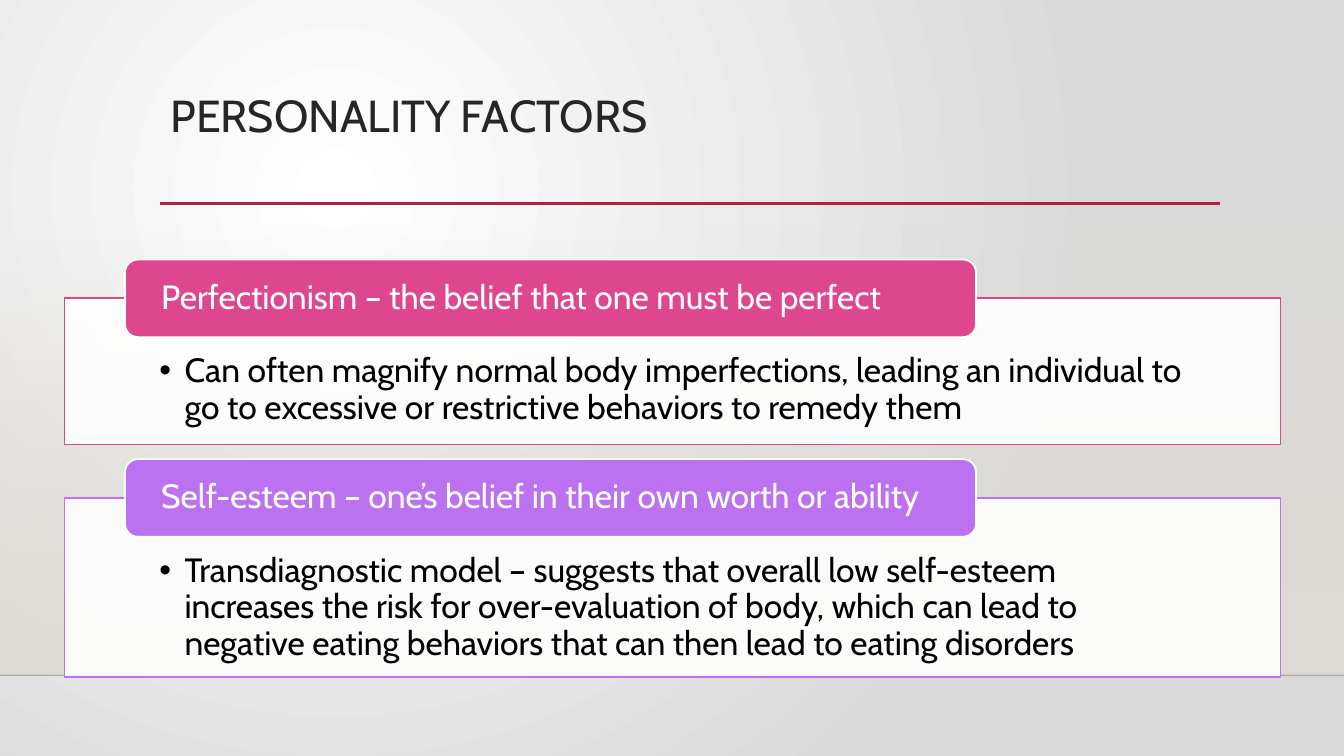
from lxml.etree import SubElement
from pptx import Presentation
from pptx.dml.color import RGBColor
from pptx.enum.shapes import MSO_CONNECTOR, MSO_SHAPE
from pptx.enum.text import MSO_ANCHOR, MSO_AUTO_SIZE, PP_ALIGN
from pptx.oxml import parse_xml
from pptx.oxml.ns import nsdecls, qn
from pptx.util import Inches, Pt

TITLE = "PERSONALITY FACTORS"
PINK = RGBColor(0xDE, 0x47, 0x8E)
PURPLE = RGBColor(0xBC, 0x72, 0xF0)
RED = RGBColor(0xB7, 0x1E, 0x42)
WHITE = RGBColor(0xFF, 0xFF, 0xFF)
BLACK = RGBColor(0, 0, 0)
DARK = RGBColor(0x26, 0x26, 0x26)
GRAY = RGBColor(0xD9, 0xD9, 0xD9)
SAND = RGBColor(0xDF, 0xDB, 0xD5)
FONT = "Cabin"
WIDTH, HEIGHT = 13.33, 7.5

FACTORS = [
    ("Perfectionism – the belief that one must be perfect",
     "Can often magnify normal body imperfections, leading an individual to go to "
     "excessive or restrictive behaviors to remedy them", PINK, 1.45),
    ("Self-esteem – one’s belief in their own worth or ability",
     "Transdiagnostic model – suggests that overall low self-esteem increases the risk "
     "for over-evaluation of body, which can lead to negative eating behaviors that can "
     "then lead to eating disorders", PURPLE, 1.78),
]
TOP, GAP, RISE = 2.96, 0.53, 0.385


def fade(color, percent):
    SubElement(color, qn("a:alpha")).set("val", str(percent * 1000))


def blend(fill, start, end, shade):
    fill.gradient()
    grad = fill._xPr.find(qn("a:gradFill"))
    new = parse_xml(
        f'<a:gradFill {nsdecls("a")} rotWithShape="1"><a:gsLst>'
        f'<a:gs pos="0"><a:srgbClr val="{start}"/></a:gs>'
        f'<a:gs pos="100000"><a:srgbClr val="{end}"/></a:gs>'
        f'</a:gsLst>{shade}</a:gradFill>')
    grad.getparent().replace(grad, new)
    return new


def add_box(kind, left, top, width, height):
    box = slide.shapes.add_shape(
        kind, Inches(left), Inches(top), Inches(width), Inches(height))
    box.shadow.inherit = False
    return box


def paint(box, fill, edge):
    box.fill.solid()
    box.fill.fore_color.rgb = fill
    box.line.color.rgb = edge
    box.line.width = Pt(1.25)


def add_rule(left, right, top, color, width):
    rule = slide.shapes.add_connector(
        MSO_CONNECTOR.STRAIGHT, Inches(left), Inches(top), Inches(right), Inches(top))
    rule.line.color.rgb = color
    rule.line.width = Pt(width)
    SubElement(rule._element.spPr, qn("a:effectLst"))
    return rule


def write(shape, text, size, color, anchor, insets):
    frame = shape.text_frame
    frame.text = text
    frame.word_wrap = True
    frame.auto_size = MSO_AUTO_SIZE.NONE
    frame.vertical_anchor = anchor
    (frame.margin_left, frame.margin_top,
     frame.margin_right, frame.margin_bottom) = map(Inches, insets)
    para = frame.paragraphs[0]
    para.alignment = PP_ALIGN.LEFT
    para.line_spacing = 0.9
    font = para.runs[0].font
    font.name = FONT
    font.size = Pt(size)
    font.color.rgb = color
    return para


def add_bullet(para):
    props = para._p.get_or_add_pPr()
    props.set("marL", str(Inches(0.25)))
    props.set("indent", str(Inches(-0.25)))
    SubElement(props, qn("a:buFont")).set("typeface", "Arial")
    SubElement(props, qn("a:buChar")).set("char", "•")


deck = Presentation()
deck.slide_width, deck.slide_height = Inches(WIDTH), Inches(HEIGHT)
slide = deck.slides.add_slide(deck.slide_layouts[5])
blend(slide.background.fill, WHITE, GRAY,
      '<a:path path="circle"><a:fillToRect l="50000" t="50000" r="100000" b="100000"/></a:path>')

title = slide.shapes.title
title.left, title.top = Inches(1.59), Inches(0.88)
title.width, title.height = Inches(10.5), Inches(1.15)
write(title, TITLE, 32, DARK, MSO_ANCHOR.TOP, (0.1, 0.05, 0.1, 0.05))

wall = add_box(MSO_SHAPE.RECTANGLE, 0, 2.21, WIDTH, 4.49)
wall.line.fill.background()
grad = blend(wall.fill, SAND, SAND, '<a:lin ang="5400000" scaled="0"/>')
fade(grad.find(".//" + qn("a:srgbClr")), 0)

floor = add_rule(0, WIDTH, 6.7, BLACK, 1)
fade(floor._element.spPr.find(".//" + qn("a:srgbClr")), 20)
add_rule(1.59, 12.1, 2.02, RED, 2.5)

top = TOP
for head, body, color, height in FACTORS:
    panel = add_box(MSO_SHAPE.RECTANGLE, 0.64, top, 12.06, height)
    paint(panel, WHITE, color)
    fade(panel._element.spPr.find(".//" + qn("a:srgbClr")), 90)
    add_bullet(write(panel, body, 24, BLACK, MSO_ANCHOR.TOP, (0.94, 0.55, 0.94, 0.19)))
    tab = add_box(MSO_SHAPE.ROUNDED_RECTANGLE, 1.24, top - RISE, 8.44, 2 * RISE)
    paint(tab, color, WHITE)
    write(tab, head, 24, WHITE, MSO_ANCHOR.MIDDLE, (0.32, 0, 0.32, 0))
    top += height + GAP

deck.save("out.pptx")
